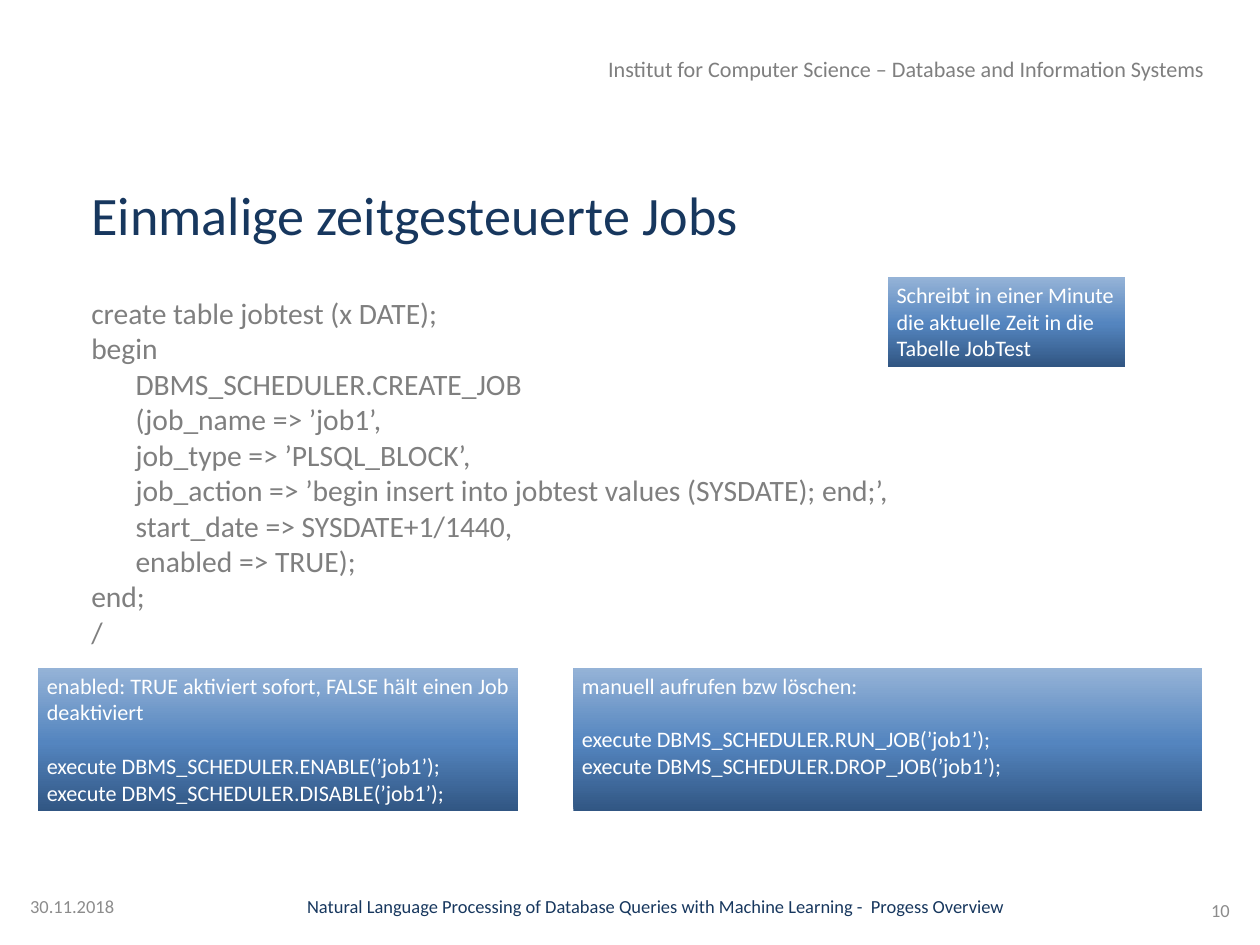
from copy import deepcopy
from pptx import Presentation, util as u
from pptx.dml.color import RGBColor
from pptx.enum import shapes, text

HUES = {"navy": "17375E", "gray": "7F7F7F", "pale": "8C8C8C", "white": "FFFFFF",
        "dark": "315683", "mid": "5485BF", "light": "95B3D7"}
SHADES = [("dark", 0), ("mid", 0.48), ("light", 1)]


def write(shape, lines, size, hue, align="LEFT", inset=(0, 0), gap=None):
    """Fill a shape with lines; gap is the index of a line set one line lower."""
    frame = shape.text_frame
    frame.word_wrap = True
    frame.auto_size = text.MSO_AUTO_SIZE.NONE
    frame.vertical_anchor = text.MSO_ANCHOR.TOP
    frame.margin_left = frame.margin_right = u.Inches(inset[0])
    frame.margin_top = frame.margin_bottom = u.Inches(inset[1])
    for i, line in enumerate(lines):
        para = frame.paragraphs[0] if i == 0 else frame.add_paragraph()
        para.alignment = getattr(text.PP_ALIGN, align)
        para.space_before = u.Pt(size * 1.22 if i and i == gap else 0)
        run = para.add_run()
        run.text = line
        run.font.name = "Calibri"
        run.font.size = u.Pt(size)
        run.font.color.rgb = RGBColor.from_string(HUES[hue])


prs = Presentation()
prs.slide_width, prs.slide_height = u.Inches(14.22), u.Inches(10.67)
slide = prs.slides.add_slide(prs.slide_layouts[5])

# Title
title = slide.shapes.title
title.left, title.top = u.Inches(1.03), u.Inches(2.05)
title.width, title.height = u.Inches(11.86), u.Inches(0.74)
write(title, ["Einmalige zeitgesteuerte Jobs"], 44, "navy")

# Code listing
code = [
    "create table jobtest (x DATE);",
    "begin",
    "\tDBMS_SCHEDULER.CREATE_JOB",
    "\t(job_name => ’job1’,",
    "\tjob_type => ’PLSQL_BLOCK’,",
    "\tjob_action => ’begin insert into jobtest values (SYSDATE); end;’,",
    "\tstart_date => SYSDATE+1/1440,",
    "\tenabled => TRUE);",
    "end;",
    "/",
]
box = slide.shapes.add_textbox(*map(u.Inches, (1.03, 3.33, 9.71, 4.05)))
write(box, code, 24, "gray")

# Header and footer
labels = [
    ((6.48, 0.58, 7.21, 0.61), 18, "gray", "RIGHT", (0.1, 0.05),
     "Institut for Computer Science – Database and Information Systems"),
    ((2.69, 10.11, 9.42, 0.3), 15, "navy", "CENTER", (0, 0),
     "Natural Language Processing of Database Queries with Machine Learning -  Progess Overview"),
    ((0.34, 10.11, 1.6, 0.31), 15, "pale", "LEFT", (0, 0), "30.11.2018"),
    ((12.94, 10.15, 0.94, 0.27), 15, "pale", "RIGHT", (0, 0), "10"),
]
for place, size, hue, align, inset, label in labels:
    box = slide.shapes.add_textbox(*map(u.Inches, place))
    write(box, [label], size, hue, align, inset)

# Gradient notes
notes = [
    ((0.43, 7.54, 5.42, 1.62),
     ["enabled: TRUE aktiviert sofort, FALSE hält einen Job deaktiviert",
      "execute DBMS_SCHEDULER.ENABLE(’job1’);",
      "execute DBMS_SCHEDULER.DISABLE(’job1’);"]),
    ((6.47, 7.54, 7.1, 1.62),
     ["manuell aufrufen bzw löschen:",
      "execute DBMS_SCHEDULER.RUN_JOB(’job1’);",
      "execute DBMS_SCHEDULER.DROP_JOB(’job1’);"]),
    ((10.02, 3.13, 2.68, 1.01),
     ["Schreibt in einer Minute die aktuelle Zeit in die Tabelle JobTest"]),
]
for place, lines in notes:
    note = slide.shapes.add_shape(shapes.MSO_SHAPE.RECTANGLE, *map(u.Inches, place))
    note.shadow.inherit = False
    note.line.fill.background()
    note.fill.gradient()
    note.fill.gradient_angle = 90
    # A third stop goes between the two given ones
    first = note._element.xpath(".//a:gs")[0]
    first.addnext(deepcopy(first))
    for stop, (hue, place_at) in zip(note.fill.gradient_stops, SHADES):
        stop.color.rgb = RGBColor.from_string(HUES[hue])
        stop.position = place_at
    write(note, lines, 18, "white", inset=(0.1, 0.05), gap=1)

prs.save("out.pptx")
